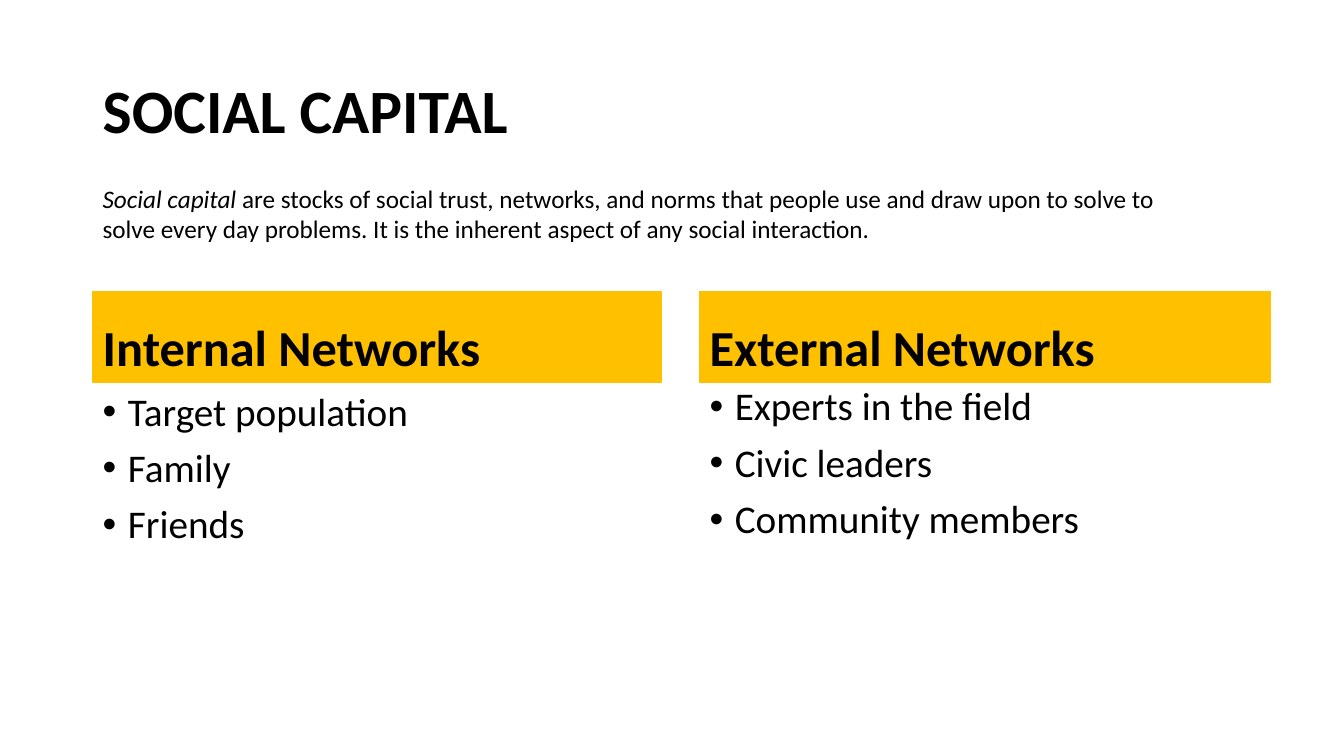
"""Build the Social Capital slide with two columns of networks."""
from pptx import Presentation
from pptx.dml.color import RGBColor
from pptx.enum.text import MSO_ANCHOR, MSO_AUTO_SIZE, PP_ALIGN
from pptx.util import Pt

TITLE = "SOCIAL CAPITAL"
DEFINITION = [
    ("Social capital ", True),
    ("are stocks of social trust, networks, and norms that people use and draw upon "
     "to solve to solve every day problems. It is the inherent aspect of any social "
     "interaction.", False),
]
NETWORKS = [
    {"heading": "Internal Networks", "left": 66.2, "width": 406.1, "list_top": 276.5,
     "members": ["Target population", "Family", "Friends"]},
    {"heading": "External Networks", "left": 499.7, "width": 408.2, "list_top": 272.9,
     "members": ["Experts in the field", "Civic leaders", "Community members"]},
]

FONT = "Calibri"
BLACK = RGBColor(0x00, 0x00, 0x00)
GOLD = RGBColor(0xFF, 0xC0, 0x00)
TOP, MIDDLE, BOTTOM = MSO_ANCHOR.TOP, MSO_ANCHOR.MIDDLE, MSO_ANCHOR.BOTTOM
LEFT = PP_ALIGN.LEFT
NO_AUTOFIT = MSO_AUTO_SIZE.NONE
COMPARISON_LAYOUT = 4
LEFT_MARGIN = 66.2
HEADING_TOP, HEADING_HEIGHT, LIST_HEIGHT = 208.1, 64.8, 290.2
BULLET_INDENT = Pt(18)


def place(shape, left, top, width, height):
    shape.left, shape.top, shape.width, shape.height = map(Pt, (left, top, width, height))


def write(shape, paragraphs, size, bold=False, anchor=TOP, line_spacing=0.9,
          space_before=0, bulleted=False):
    """Fill a shape with paragraphs, each a list of (text, italic) runs."""
    frame = shape.text_frame
    frame.word_wrap = True
    frame.auto_size = NO_AUTOFIT
    frame.vertical_anchor = anchor
    for index, runs in enumerate(paragraphs):
        paragraph = frame.add_paragraph() if index else frame.paragraphs[0]
        paragraph.alignment = LEFT
        paragraph.line_spacing = line_spacing
        paragraph.space_before = Pt(space_before)
        if bulleted:
            properties = paragraph._p.get_or_add_pPr()
            properties.set("marL", str(BULLET_INDENT))
            properties.set("indent", str(-BULLET_INDENT))
        for text, italic in runs:
            run = paragraph.add_run()
            run.text = text
            run.font.name = FONT
            run.font.size = Pt(size)
            run.font.bold = bold
            run.font.italic = italic
            run.font.color.rgb = BLACK


def add_network(network, heading, member_list):
    left, width = network["left"], network["width"]
    place(heading, left, HEADING_TOP, width, HEADING_HEIGHT)
    heading.fill.solid()
    heading.fill.fore_color.rgb = GOLD
    heading.line.color.rgb = GOLD
    heading.line.width = Pt(0.75)
    write(heading, [[(network["heading"], False)]], 36, bold=True, anchor=BOTTOM,
          space_before=10)
    place(member_list, left, network["list_top"], width, LIST_HEIGHT)
    write(member_list, [[(member, False)] for member in network["members"]], 28,
          space_before=10, bulleted=True)


def main():
    presentation = Presentation()
    presentation.slide_width, presentation.slide_height = Pt(960), Pt(540)
    layout = presentation.slide_layouts[COMPARISON_LAYOUT]
    slide = presentation.slides.add_slide(layout)
    title, *bodies = slide.placeholders

    place(title, LEFT_MARGIN, 28.8, 828, 104.4)
    write(title, [[(TITLE, False)]], 44, bold=True, anchor=MIDDLE)

    for network, heading, member_list in zip(NETWORKS, bodies[::2], bodies[1::2]):
        add_network(network, heading, member_list)

    definition = slide.shapes.add_textbox(Pt(LEFT_MARGIN), Pt(127.4), Pt(786.2), Pt(51.1))
    write(definition, [DEFINITION], 18, line_spacing=1.0)

    presentation.save("out.pptx")


if __name__ == "__main__":
    main()
